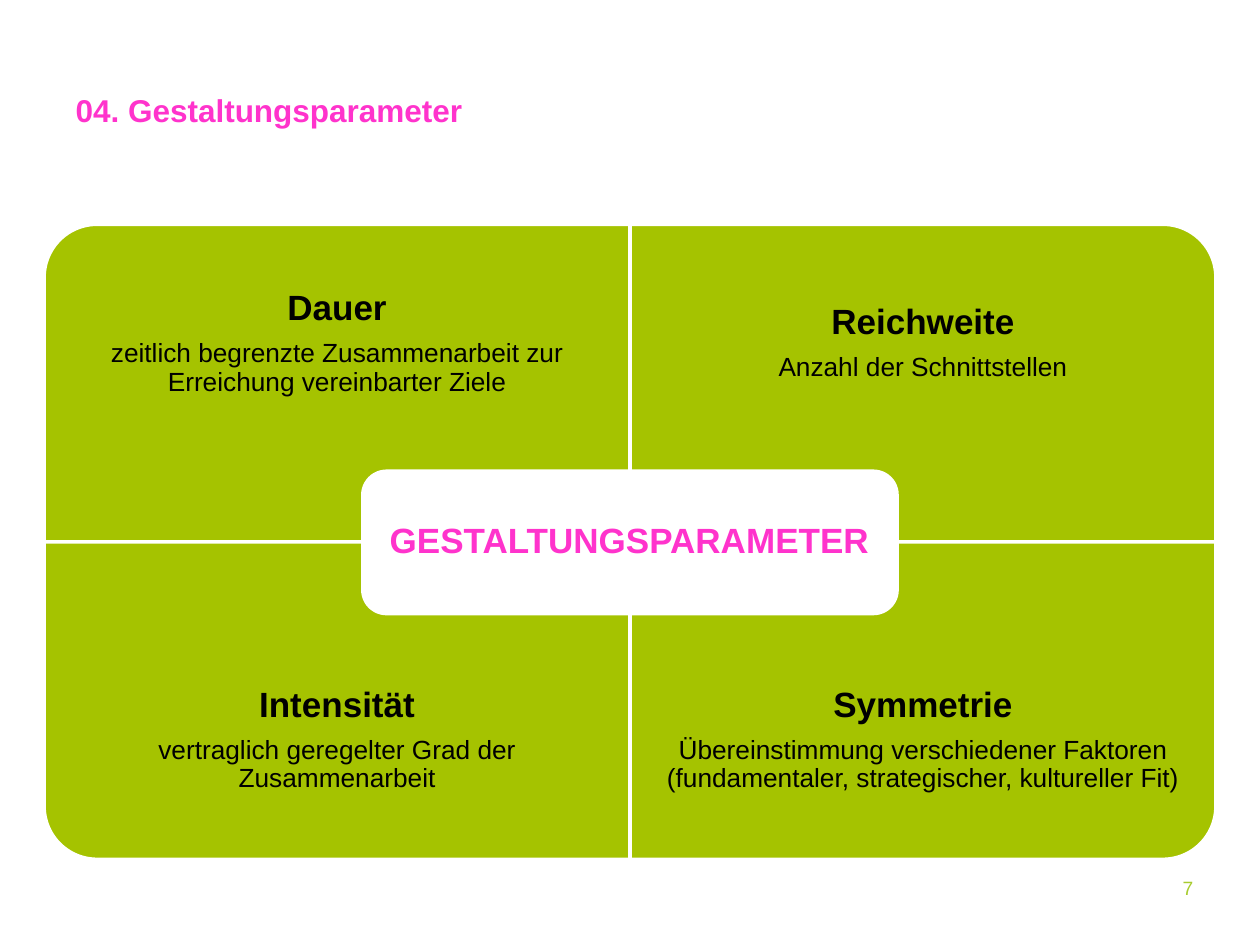
"""Build the slide on the four design parameters of a cooperation."""
from pptx import Presentation
from pptx.dml.color import RGBColor
from pptx.enum.shapes import MSO_SHAPE
from pptx.enum.text import MSO_ANCHOR, PP_ALIGN
from pptx.util import Inches, Pt

GREEN = RGBColor(0xA5, 0xC3, 0x00)
LIME = RGBColor(0xA8, 0xCC, 0x2F)
PINK = RGBColor(0xFF, 0x33, 0xCC)
WHITE = RGBColor(0xFF, 0xFF, 0xFF)
BLACK = RGBColor(0x00, 0x00, 0x00)

LEFT, TOP, WIDTH, HEIGHT = 0.35, 1.78, 4.65, 2.52
LABEL_HEIGHT = 1.89
QUADRANTS = [
    (0, 0, 270, "Dauer",
     "zeitlich begrenzte Zusammenarbeit zur Erreichung vereinbarter Ziele"),
    (1, 0, 0, "Reichweite", "Anzahl der Schnittstellen"),
    (0, 1, 180, "Intensität", "vertraglich geregelter Grad der Zusammenarbeit"),
    (1, 1, 90, "Symmetrie",
     "Übereinstimmung verschiedener Faktoren "
     "(fundamentaler, strategischer, kultureller Fit)"),
]


class SlideBuilder:
    """Hold the shared style and the current slide."""

    font = "Arial"
    heading = {"size": Pt(20), "bold": True, "color": BLACK}
    detail = {"size": Pt(15), "bold": False, "color": BLACK}

    def __init__(self, prs):
        """Add a title-only slide."""
        self.s = prs.slides.add_slide(prs.slide_layouts[5])

    def run(self, p, text, color, **formats):
        """Put one formatted run into a paragraph."""
        r = p.add_run()
        r.text = text
        r.font.color.rgb = color
        for name, value in {"name": self.font, **formats}.items():
            setattr(r.font, name, value)

    def title(self, text, *box):
        """Move and fill the title placeholder."""
        sp = self.s.shapes.title
        sp.left, sp.top, sp.width, sp.height = map(Inches, box)
        tf = sp.text_frame
        tf.vertical_anchor = MSO_ANCHOR.TOP
        p = tf.paragraphs[0]
        p.alignment = PP_ALIGN.LEFT
        self.run(p, text, PINK, size=Pt(18), bold=True)

    def panel(self, kind, box, fill, rotation=0):
        """Draw a filled panel with a white outline."""
        sp = self.s.shapes.add_shape(kind, *map(Inches, box))
        sp.shadow.inherit = False
        sp.rotation = rotation
        sp.fill.solid()
        sp.fill.fore_color.rgb = fill
        sp.line.color.rgb = WHITE
        sp.line.width = Pt(2)

    def quadrant(self, column, row, rotation, heading, detail):
        """Draw one quadrant with its rounded corner outwards and its label."""
        x, y = LEFT + column * WIDTH, TOP + row * HEIGHT
        w, h = (HEIGHT, WIDTH) if rotation % 180 else (WIDTH, HEIGHT)
        box = (x + (WIDTH - w) / 2, y + (HEIGHT - h) / 2, w, h)
        self.panel(MSO_SHAPE.ROUND_1_RECTANGLE, box, GREEN, rotation)
        label_box = (x, y + row * (HEIGHT - LABEL_HEIGHT), WIDTH, LABEL_HEIGHT)
        self.label(label_box, 0.16, [(heading, self.heading), (detail, self.detail)])

    def label(self, box, inset, lines, align=PP_ALIGN.CENTER,
              anchor=MSO_ANCHOR.MIDDLE, spacing=0.9):
        """Add a text box with one paragraph per line."""
        tf = self.s.shapes.add_textbox(*map(Inches, box)).text_frame
        frame = {"word_wrap": True, "vertical_anchor": anchor}
        for side in ("left", "right", "top", "bottom"):
            frame[f"margin_{side}"] = Inches(inset)
        for name, value in frame.items():
            setattr(tf, name, value)
        for i, (text, formats) in enumerate(lines):
            p = tf.add_paragraph() if i else tf.paragraphs[0]
            p.alignment = align
            p.line_spacing = spacing
            p.space_after = Pt(round(formats["size"].pt * 0.35, 2))
            self.run(p, text, **formats)


def main():
    """Build and save the presentation."""
    prs = Presentation()
    prs.slide_width, prs.slide_height = Inches(10), Inches(7.5)
    b = SlideBuilder(prs)
    b.title("04. Gestaltungsparameter", 0.5, 0.67, 5.42, 1.25)
    for quadrant in QUADRANTS:
        b.quadrant(*quadrant)
    b.panel(MSO_SHAPE.ROUNDED_RECTANGLE, (2.88, 3.74, 4.24, 1.13), WHITE)
    b.label((2.93, 3.79, 4.13, 1.02), 0.08,
            [("GESTALTUNGSPARAMETER", {**b.heading, "color": PINK})])
    b.label((8.39, 6.9, 1.18, 0.29), 0.1, [("7", {"size": Pt(11), "color": LIME})],
            PP_ALIGN.RIGHT, MSO_ANCHOR.MIDDLE, 1)
    prs.save("out.pptx")


if __name__ == "__main__":
    main()
